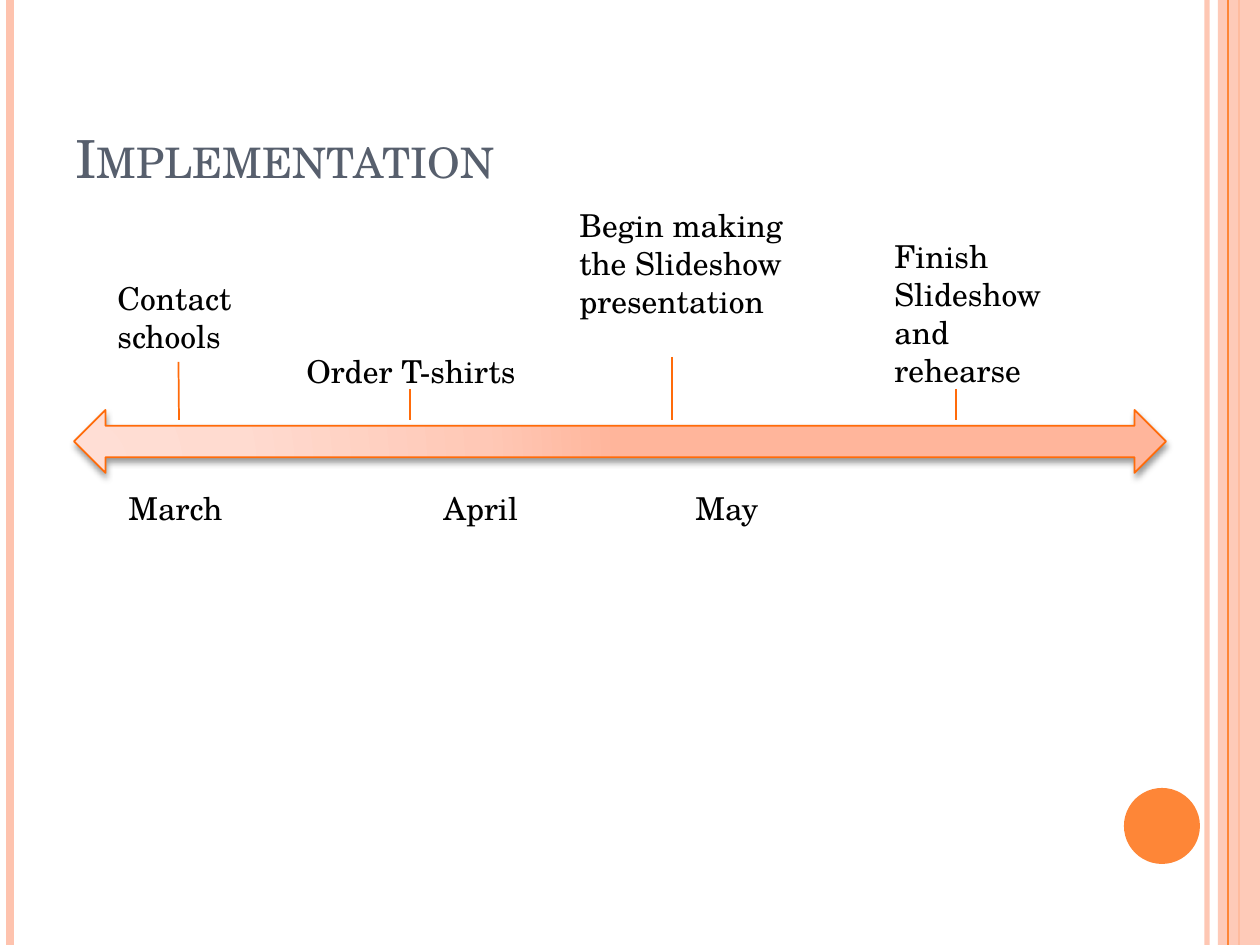
from dataclasses import dataclass

from lxml import etree
from pptx import Presentation
from pptx.dml.color import RGBColor
from pptx.enum import shapes, text
from pptx.oxml import ns
from pptx.util import Pt

SCALE = 914400 / 126


@dataclass(frozen=True)
class Theme:
    font: str = "TeX Gyre Schola"
    title: str = "575F6D"
    ink: str = "000000"
    pale: str = "FEC3AE"
    bright: str = "FE8637"
    edge: str = "FF6B0A"
    fade: tuple = ((0, "FFDED5"), (30, "FFDBD0"), (75, "FFC8B6"), (100, "FFB59B"))
    head: int = 30
    body: int = 18


THEME = Theme()


def px(*vals):
    return [round(v * SCALE) for v in vals]


def rgb(code):
    return RGBColor.from_string(code)


def sub(node, tag, **attrs):
    return etree.SubElement(node, ns.qn(tag), {k: str(v) for k, v in attrs.items()})


def tint(part, alpha):
    if alpha < 100:
        color = part._element.spPr.find(".//" + ns.qn("a:srgbClr"))
        sub(color, "a:alpha", val=alpha * 1000)


def label(slide, words, box, size=THEME.body, color=THEME.ink, caps=False,
          anchor=text.MSO_ANCHOR.TOP, fit=text.MSO_AUTO_SIZE.SHAPE_TO_FIT_TEXT):
    item = slide.shapes.add_textbox(*px(*box))
    frame = item.text_frame
    frame.word_wrap = True
    frame.auto_size = fit
    frame.vertical_anchor = anchor
    run = frame.paragraphs[0].add_run()
    run.text = words
    run.font.name = THEME.font
    run.font.size = Pt(size)
    run.font.color.rgb = rgb(color)
    if caps:
        run.font._element.set("cap", "small")
    return item


def shape(slide, kind, box, color, alpha=100):
    item = slide.shapes.add_shape(kind, *px(*box))
    item.shadow.inherit = False
    item.fill.solid()
    item.fill.fore_color.rgb = rgb(color)
    item.line.fill.background()
    tint(item, alpha)
    return item


def line(slide, x, top, end, color, width, alpha=100):
    item = slide.shapes.add_connector(
        shapes.MSO_CONNECTOR.STRAIGHT, *px(x, top, x, end))
    item.line.color.rgb = rgb(color)
    item.line.width = Pt(width)
    tint(item, alpha)
    sub(item._element.spPr, "a:effectLst")
    return item


def arrow(slide, box):
    item = shape(slide, shapes.MSO_SHAPE.LEFT_RIGHT_ARROW, box, THEME.pale)
    item.line.color.rgb = rgb(THEME.edge)
    item.line.width = Pt(1)
    props = item._element.spPr
    grad = etree.Element(ns.qn("a:gradFill"), rotWithShape="1")
    stops = sub(grad, "a:gsLst")
    for pos, color in THEME.fade:
        sub(sub(stops, "a:gs", pos=pos * 1000), "a:srgbClr", val=color)
    sub(sub(grad, "a:path", path="circle"), "a:fillToRect",
        l=5000, t=100000, r=120000, b=10000)
    props.replace(props.find(ns.qn("a:solidFill")), grad)
    shade = sub(props.find(ns.qn("a:effectLst")), "a:outerShdw",
                blurRad=Pt(4), dist=Pt(2), dir=5400000, rotWithShape=0)
    sub(sub(shade, "a:srgbClr", val="000000"), "a:alpha", val=40000)


def frame(slide, high):
    line(slide, 1207, 0, high, THEME.pale, 3, 93)
    line(slide, 10, 0, high, THEME.pale, 4.5)
    line(slide, 1239, 0, high, THEME.bright, 1.5)
    shape(slide, shapes.MSO_SHAPE.RECTANGLE, (1218, 0, 42, high), THEME.pale, 87)
    line(slide, 1228, 0, high, THEME.bright, 0.75)
    shape(slide, shapes.MSO_SHAPE.OVAL, (1124, 788, 76, 76), THEME.bright)


def main():
    wide, high = 1260, 945
    deck = Presentation()
    deck.slide_width, deck.slide_height = px(wide, high)
    slide = deck.slides.add_slide(deck.slide_layouts[6])
    frame(slide, high)
    label(slide, "Implementation", (63, 38, 1029, 157), size=THEME.head,
          color=THEME.title, caps=True, anchor=text.MSO_ANCHOR.BOTTOM,
          fit=text.MSO_AUTO_SIZE.NONE)
    arrow(slide, (74, 410, 1092, 63))
    steps = (
        ("Order T-shirts", (294, 346, 273, 50), 410, 389, False),
        ("Contact schools", (105, 273, 147, 89), 179, 362, True),
        ("Begin making the Slideshow presentation", (567, 200, 242, 165), 672, 357, False),
        ("Finish Slideshow and rehearse", (882, 231, 210, 165), 956, 389, False),
    )
    for words, box, x, top, joined in steps:
        note = label(slide, words, box)
        tick = line(slide, x, top, 420, THEME.edge, 1)
        if joined:
            tick.begin_connect(note, 2)
    label(slide, "March\t\t\t\tApril\t\t\tMay", (116, 483, 1071, 50))
    deck.save("out.pptx")


if __name__ == "__main__":
    main()
